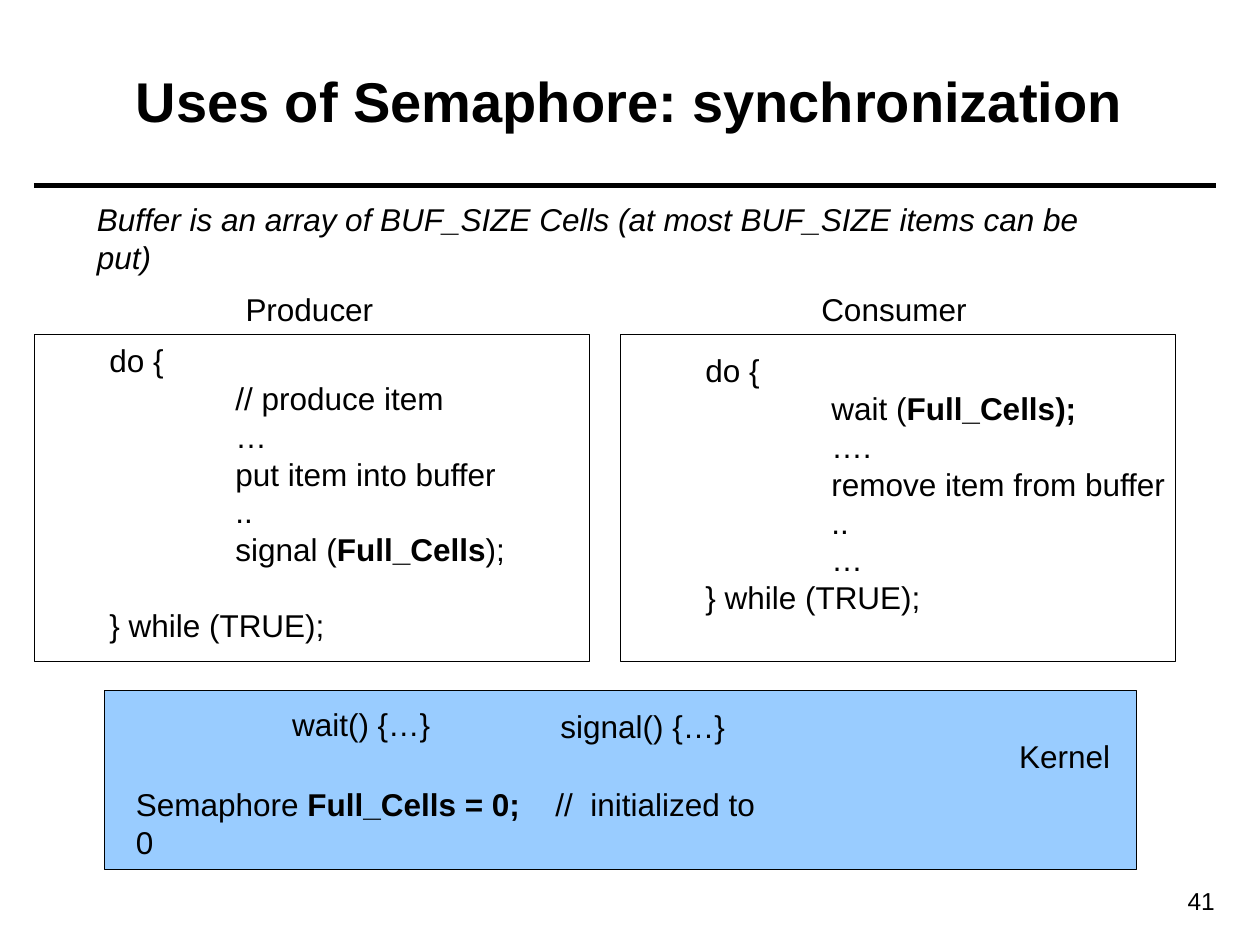
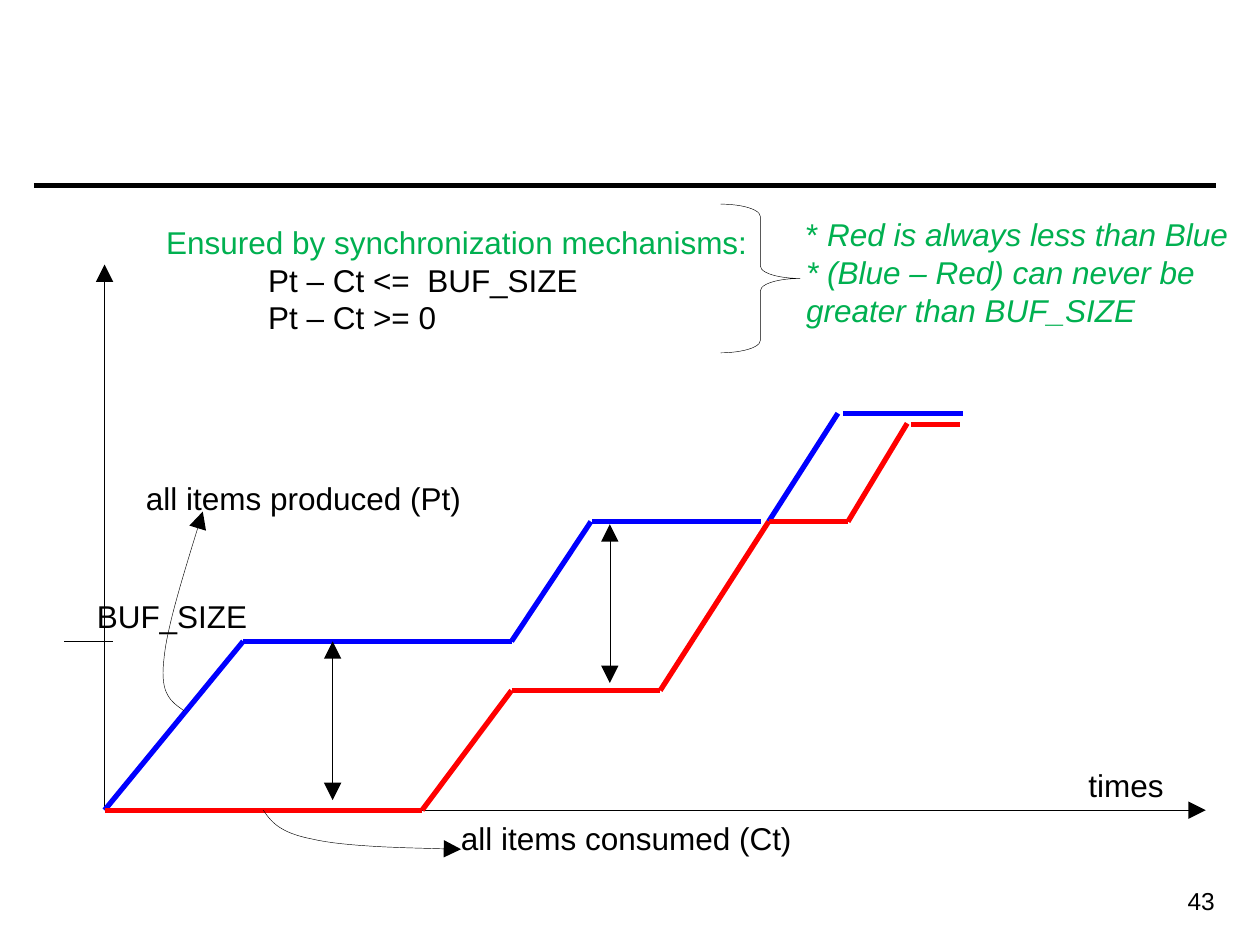
import pptx
import pptx.util
import pptx.dml.color
import pptx.enum.shapes
import pptx.enum.text
import pptx.oxml
import pptx.oxml.ns

Inches, Pt = pptx.util.Inches, pptx.util.Pt
SHAPE = pptx.enum.shapes.MSO_SHAPE
ALIGN = pptx.enum.text.PP_ALIGN
ANCHOR = pptx.enum.text.MSO_ANCHOR

# Shared look
COLORS = {"ink": "000000", "kernel": "99CCFF", "produced": "0000FF",
          "consumed": "FF0000", "note": "00B050"}
FONT = "Arial"
THIN, THICK = 0.25, 3
SKIPPED_LINE = 21.6
TITLE_AT = (0.35, 0.17, 9.29, 1.25)
NUMBER_AT = (8.7, 6.98, 1.04, 0.34)
RULE = ((0.27, 1.47), (9.65, 1.47))

# Semaphore slide: "|" switches emphasis on and off, code lines are (level, text)
INTRO = "Buffer is an array of BUF_SIZE Cells (at most BUF_SIZE items can be put)"
PRODUCER = [(0, "do {"), (1, "// produce item"), (1, "…"), (1, "put item into buffer"),
            (1, ".."), (1, "signal (|Full_Cells|);"), (0, "} while (TRUE);")]
CONSUMER = [(0, "do {"), (1, "wait (|Full_Cells);"), (1, "…."),
            (1, "remove item from buffer"), (1, ".."), (1, "…"), (0, "} while (TRUE);")]
CODE_TEXTS = [  # place, lines, space before the last line
    ((0.27, 2.66, 4.57, 2.5), PRODUCER, SKIPPED_LINE),
    ((5, 2.74, 4.57, 2.2), CONSUMER, 0),
]
KERNEL_BOX = (0.83, 5.48, 8.19, 1.42)
CODE_BOXES = [(left, 2.65, 4.41, 2.6) for left in (0.27, 4.92)]
SEMAPHORE = "Semaphore |Full_Cells = 0;|\t//  initialized to 0"
SEMAPHORE_AT, COMMENT_TAB = (0.98, 6.18, 5.25, 0.4), 3.33
SEMAPHORE_LABELS = [
    ("Kernel", (7.99, 5.8, 0.95, 0.4)),
    ("Producer", (1.85, 2.25, 1.25, 0.4)),
    ("Consumer", (6.42, 2.25, 1.4, 0.4)),
    ("wait() {…}", (2.22, 5.55, 1.4, 0.4)),
    ("signal() {…}", (4.35, 5.56, 1.6, 0.4)),
]

# Timeline slide
ORIGIN = (0.83, 6.43)
AXES = [(ORIGIN, (9.57, 6.43)), (ORIGIN, (0.83, 2.1))]
SIZE_TICK = ((0.51, 5.09), (0.9, 5.09))
SIZE_GAPS = [((2.64, 5.09), (2.64, 6.35)), ((4.84, 4.16), (4.84, 5.42))]
CURVES = {  # each curve is a list of unbroken stretches
    "produced": [[ORIGIN, (1.93, 5.09), (3.35, 5.09), (4.06, 5.09), (4.69, 4.14)],
                 [(4.7, 4.14), (6.04, 4.14)], [(6.1, 4.14), (6.65, 3.28)],
                 [(6.69, 3.28), (7.64, 3.28)]],
    "consumed": [[ORIGIN, (3.35, 6.43), (4.06, 5.48), (5.24, 5.48), (6.1, 4.14),
                  (6.73, 4.14), (7.2, 3.36)],
                 [(7.23, 3.37), (7.62, 3.37)]],
}
POINTERS = [  # start, then three Bézier points per stretch
    [(1.46, 5.64), (1.36, 5.57), (1.27, 5.51), (1.3, 5.25),
     (1.32, 4.98), (1.47, 4.52), (1.61, 4.06)],
    [(2.09, 6.43), (2.15, 6.52), (2.22, 6.61), (2.48, 6.66),
     (2.74, 6.72), (3.2, 6.73), (3.66, 6.74)],
]
BRACE_AT, BRACE_CURL = (5.72, 1.62, 0.63, 1.18), 0.156
TIMELINE_LABELS = [
    (["BUF_SIZE"], (0.67, 4.69, 1.5, 0.4), "ink"),
    (["all items produced (Pt)"], (1.06, 3.75, 2.75, 0.4), "ink"),
    (["all items consumed (Ct)"], (3.56, 6.45, 2.87, 0.4), "ink"),
    (["Pt – Ct <=  BUF_SIZE", "Pt – Ct >= 0"], (2.03, 2.02, 2.75, 0.7), "ink"),
    (["Ensured by synchronization mechanisms:"], (1.22, 1.72, 4.9, 0.41), "note"),
    (["times"], (8.54, 6.03, 0.85, 0.4), "ink"),
    (["* |Red is always less than Blue",
      "|* (Blue – Red) can never be greater than BUF_SIZE"], (6.3, 1.66, 3.82, 1.01), "note"),
]


def rgb(name):
    return pptx.dml.color.RGBColor.from_string(COLORS[name])


def add_text(s, at, paragraphs, size=18, color="ink", bold=False, italic=False,
             emphasis="bold", align=ALIGN.LEFT, anchor=ANCHOR.TOP):
    """Text box; a paragraph is a string, or (left indent in inches, string)."""
    tf = s.shapes.add_textbox(*map(Inches, at)).text_frame
    tf.word_wrap = True
    tf.vertical_anchor = anchor
    for i, paragraph in enumerate(paragraphs):
        indent, text = (0, paragraph) if isinstance(paragraph, str) else paragraph
        p = tf.add_paragraph() if i else tf.paragraphs[0]
        p.alignment = align
        if indent:
            pPr = p._p.get_or_add_pPr()
            pPr.set("marL", str(Inches(indent)))
            pPr.set("indent", "0")
        for j, part in enumerate(text.split("|")):
            if not part:
                continue
            r = p.add_run()
            r.text = part
            font = r.font
            font.name, font.size, font.bold, font.italic = FONT, Pt(size), bold, italic
            font.color.rgb = rgb(color)
            if j % 2:
                setattr(font, emphasis, True)
    return tf


def style_line(shape, color="ink", width=THIN, head=False, tail=False):
    shape.line.color.rgb = rgb(color)
    shape.line.width = Pt(width)
    ln = shape.element.spPr.find(pptx.oxml.ns.qn("a:ln"))
    for tag, wanted in (("a:headEnd", head), ("a:tailEnd", tail)):
        if wanted:
            ln.append(pptx.oxml.parse_xml(
                f'<{tag} {pptx.oxml.ns.nsdecls("a")} type="triangle" w="lg" len="lg"/>'))


def add_line(s, start, end, **style):
    c = s.shapes.add_connector(pptx.enum.shapes.MSO_CONNECTOR.STRAIGHT,
                               *map(Inches, (*start, *end)))
    style_line(c, **style)
    c.element.spPr.append(pptx.oxml.parse_xml(
        f'<a:effectLst {pptx.oxml.ns.nsdecls("a")}/>'))


def finish_shape(sp, fill=None, **style):
    sp.shadow.inherit = False
    if fill:
        sp.fill.solid()
        sp.fill.fore_color.rgb = rgb(fill)
    else:
        sp.fill.background()
    style_line(sp, **style)


def add_shape(s, kind, at, fill=None):
    sp = s.shapes.add_shape(kind, *map(Inches, at))
    finish_shape(sp, fill)
    return sp


def add_pointer(s, points, steps=16):
    """Curved arrow traced through Bézier stretches."""
    points = [tuple(map(Inches, point)) for point in points]
    traced = []
    for i in range(0, len(points) - 1, 3):
        for k in range(1, steps + 1):
            t = k / steps
            weights = ((1 - t) ** 3, 3 * t * (1 - t) ** 2, 3 * t * t * (1 - t), t ** 3)
            traced.append(tuple(sum(w * pt[axis] for w, pt in zip(weights, points[i:i + 4]))
                                for axis in (0, 1)))
    builder = s.shapes.build_freeform(*points[0])
    builder.add_line_segments(traced, close=False)
    finish_shape(builder.convert_to_shape(), tail=True)


def new_slide(prs, number, title=None):
    s = prs.slides.add_slide(prs.slide_layouts[6])
    add_line(s, *RULE, width=THICK)
    add_text(s, NUMBER_AT, [str(number)], size=14, align=ALIGN.RIGHT)
    if title:
        add_text(s, TITLE_AT, [title], size=32, bold=True, align=ALIGN.CENTER,
                 anchor=ANCHOR.MIDDLE)
    return s


def semaphore_slide(prs):
    s = new_slide(prs, 41, "Uses of Semaphore: synchronization")
    add_shape(s, SHAPE.RECTANGLE, KERNEL_BOX, "kernel")
    # Code of both processes
    for at, lines, gap in CODE_TEXTS:
        tf = add_text(s, at, [(0.5 + level, line) for level, line in lines])
        tf.paragraphs[-1].space_before = Pt(gap)
    for at in CODE_BOXES:
        add_shape(s, SHAPE.RECTANGLE, at)
    # Kernel declaration, with its comment at a tab stop
    tf = add_text(s, SEMAPHORE_AT, [SEMAPHORE])
    tf.paragraphs[0]._p.get_or_add_pPr().append(pptx.oxml.parse_xml(
        f'<a:tabLst {pptx.oxml.ns.nsdecls("a")}>'
        f'<a:tab pos="{Inches(COMMENT_TAB)}" algn="l"/></a:tabLst>'))
    for label, at in SEMAPHORE_LABELS:
        add_text(s, at, [label])
    add_text(s, (0.67, 1.54, 8.49, 0.4), [INTRO], italic=True)


def timeline_slide(prs):
    s = new_slide(prs, 43)
    # Axes and curves
    for start, end in AXES:
        add_line(s, start, end, tail=True)
    add_line(s, *SIZE_TICK)
    for color, stretches in CURVES.items():
        for points in stretches:
            for start, end in zip(points, points[1:]):
                add_line(s, start, end, color=color, width=THICK)
    for start, end in SIZE_GAPS:
        add_line(s, start, end, head=True, tail=True)
    # Labels and pointers
    for points in POINTERS:
        add_pointer(s, points)
    for lines, at, color in TIMELINE_LABELS:
        add_text(s, at, lines, color=color, emphasis="italic")
    brace = add_shape(s, SHAPE.RIGHT_BRACE, BRACE_AT)
    brace.adjustments[0] = BRACE_CURL


def main():
    prs = pptx.Presentation()
    prs.slide_width, prs.slide_height = Inches(10), Inches(7.5)
    semaphore_slide(prs)
    timeline_slide(prs)
    prs.save("out.pptx")


if __name__ == "__main__":
    main()
